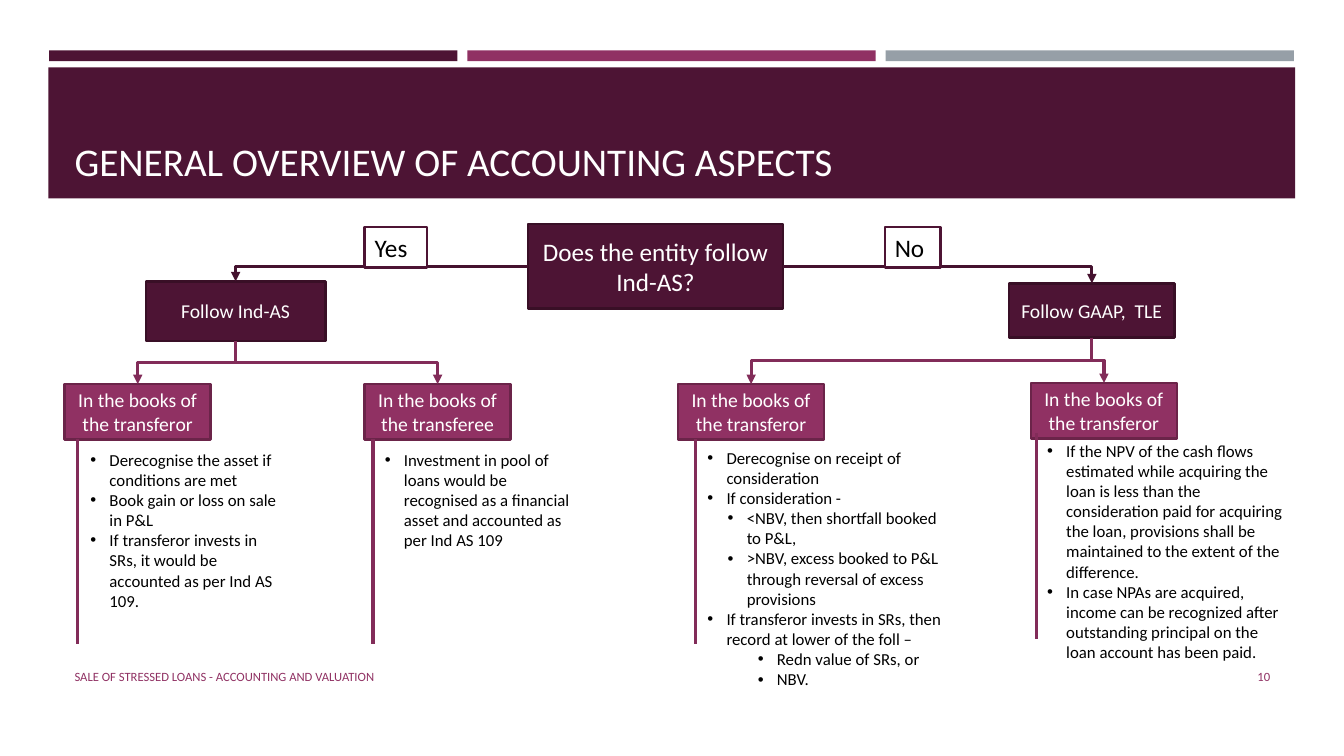
from dataclasses import dataclass

from pptx import Presentation
from pptx.dml.color import RGBColor
from pptx.enum.shapes import MSO_CONNECTOR, MSO_SHAPE
from pptx.enum.text import MSO_ANCHOR, PP_ALIGN
from pptx.oxml.ns import qn
from pptx.oxml.xmlchemy import OxmlElement
from pptx.shapes.autoshape import Shape
from pptx.shapes.connector import Connector
from pptx.slide import Slide
from pptx.util import Cm, Pt


@dataclass(frozen=True)
class Theme:
    font: str = "Calibri"
    plum: str = "4D1434"
    plum_edge: str = "390F26"
    plum_arrow: str = "45122F"
    berry: str = "903163"
    berry_edge: str = "6B2449"
    berry_arrow: str = "822C59"
    grey: str = "969FA7"
    white: str = "FFFFFF"
    black: str = "000000"
    title_size: float = 28
    question_size: float = 18
    box_size: float = 14
    point_size: float = 12
    footer_size: float = 9
    box_line: float = 1.75
    arrow_line: float = 2.25


@dataclass(frozen=True)
class Area:
    left: float
    top: float
    width: float
    height: float

    @property
    def middle_x(self) -> float:
        return self.left + self.width / 2

    @property
    def middle_y(self) -> float:
        return self.top + self.height / 2

    @property
    def right(self) -> float:
        return self.left + self.width

    @property
    def bottom(self) -> float:
        return self.top + self.height

    def lengths(self) -> tuple[Cm, Cm, Cm, Cm]:
        return Cm(self.left), Cm(self.top), Cm(self.width), Cm(self.height)


@dataclass(frozen=True)
class Point:
    text: str
    level: int = 0
    margin: float = 0.48


@dataclass(frozen=True)
class Book:
    party: str
    framework: Area
    area: Area
    rail_x: float
    rail_top: float
    treatment_area: Area
    treatment: tuple[Point, ...]


THEME = Theme()
BULLET_HANG = 0.48
RAIL_LENGTH = 5.18
BAR_PITCH = 10.54

QUESTION = Area(13.31, 5.64, 6.42, 2.13)
IND_AS = Area(3.68, 7.09, 4.52, 1.5)
GAAP = Area(25.43, 7.14, 4.17, 1.37)
FRAMEWORKS = ((IND_AS, "Follow Ind-AS"), (GAAP, "Follow GAAP,  TLE"))
ANSWERS = ((Area(9.19, 5.72, 1.57, 1.02), "Yes"), (Area(22.3, 5.72, 1.4, 1.02), "No"))

BOOKS = (
    Book("transferor", IND_AS, Area(1.63, 9.68, 3.68, 1.4), 1.96, 11.05,
         Area(2.03, 11.2, 5.36, 4.37), (
             Point("Derecognise the asset if conditions are met"),
             Point("Book gain or loss on sale in P&L"),
             Point("If transferor invests in SRs, it would be accounted as per Ind AS 109."),
         )),
    Book("transferee", IND_AS, Area(9.19, 9.68, 3.68, 1.4), 9.4, 11.05,
         Area(9.45, 11.2, 5.36, 2.82), (
             Point("Investment in pool of loans would be recognised as a financial asset "
                   "and accounted as per Ind AS 109"),
         )),
    Book("transferor", GAAP, Area(17.09, 9.68, 3.68, 1.4), 17.53, 11.05,
         Area(17.58, 11.15, 6.55, 6.4), (
             Point("Derecognise on receipt of consideration"),
             Point("If consideration -"),
             Point("<NBV, then shortfall booked to P&L,", 1, 0.99),
             Point(">NBV, excess booked to P&L through reversal of excess provisions", 1, 0.99),
             Point("If transferor invests in SRs, then record at lower of the foll –", 1),
             Point("Redn value of SRs, or", 2, 1.75),
             Point("NBV.", 2, 1.75),
         )),
    Book("transferor", GAAP, Area(25.98, 9.65, 3.68, 1.4), 26.11, 10.92,
         Area(26.14, 10.97, 6.55, 5.89), (
             Point("If the NPV of the cash flows estimated while acquiring the loan is less "
                   "than the consideration paid for acquiring the loan, provisions shall be "
                   "maintained to the extent of the difference."),
             Point("In case NPAs are acquired, income can be recognized after outstanding "
                   "principal on the loan account has been paid."),
         )),
)


def write(shape: Shape, text: str, size: float, color: str,
          align: PP_ALIGN = PP_ALIGN.LEFT, anchor: MSO_ANCHOR = MSO_ANCHOR.MIDDLE) -> None:
    frame = shape.text_frame
    frame.word_wrap = True
    frame.vertical_anchor = anchor
    frame.text = text
    for paragraph in frame.paragraphs:
        paragraph.alignment = align
        for run in paragraph.runs:
            run.font.name = THEME.font
            run.font.size = Pt(size)
            run.font.color.rgb = RGBColor.from_string(color)


def add_box(slide: Slide, area: Area, fill: str, edge: str | None = None) -> Shape:
    box = slide.shapes.add_shape(MSO_SHAPE.RECTANGLE, *area.lengths())
    box.shadow.inherit = False
    box.fill.solid()
    box.fill.fore_color.rgb = RGBColor.from_string(fill)
    if edge is None:
        box.line.fill.background()
    else:
        box.line.color.rgb = RGBColor.from_string(edge)
        box.line.width = Pt(THEME.box_line)
    return box


def add_label(slide: Slide, area: Area, text: str, size: float, color: str,
              align: PP_ALIGN = PP_ALIGN.LEFT, anchor: MSO_ANCHOR = MSO_ANCHOR.MIDDLE) -> Shape:
    label = slide.shapes.add_textbox(*area.lengths())
    write(label, text, size, color, align, anchor)
    return label


def style_line(connector: Connector, color: str, arrow: bool) -> None:
    connector.line.color.rgb = RGBColor.from_string(color)
    connector.line.width = Pt(THEME.arrow_line)
    properties = connector._element.spPr
    if arrow:
        tail = OxmlElement("a:tailEnd")
        tail.set("type", "triangle")
        properties.find(qn("a:ln")).append(tail)
    properties.append(OxmlElement("a:effectLst"))


def add_answer_arrow(slide: Slide, start_x: float, framework: Area) -> None:
    arrow = slide.shapes.add_connector(
        MSO_CONNECTOR.ELBOW, Cm(start_x), Cm(QUESTION.middle_y),
        Cm(framework.middle_x), Cm(framework.top))
    arrow._element.spPr.find(qn("a:prstGeom")).set("prst", "bentConnector2")
    style_line(arrow, THEME.plum_arrow, True)


def add_branch_arrow(slide: Slide, framework: Area, book: Area) -> None:
    drop = book.top - framework.bottom
    shift = book.middle_x - framework.middle_x
    left = (framework.middle_x + book.middle_x - drop) / 2
    top = (framework.bottom + book.top - abs(shift)) / 2
    ends = (left, left + drop) if shift < 0 else (left + drop, left)
    arrow = slide.shapes.add_connector(
        MSO_CONNECTOR.ELBOW, Cm(ends[0]), Cm(top), Cm(ends[1]), Cm(top + abs(shift)))
    arrow.rotation = 90 if shift < 0 else 270
    style_line(arrow, THEME.berry_arrow, True)


def add_treatment(slide: Slide, area: Area, points: tuple[Point, ...]) -> None:
    text = "\n".join(point.text for point in points)
    label = add_label(slide, area, text, THEME.point_size, THEME.black, anchor=MSO_ANCHOR.TOP)
    for paragraph, point in zip(label.text_frame.paragraphs, points):
        paragraph.level = point.level
        properties = paragraph._p.get_or_add_pPr()
        properties.set("marL", str(Cm(point.margin)))
        properties.set("indent", str(-Cm(BULLET_HANG)))
        bullet_font = OxmlElement("a:buFont")
        bullet_font.set("typeface", "Arial")
        bullet = OxmlElement("a:buChar")
        bullet.set("char", "•")
        properties.extend((bullet_font, bullet))


def add_book(slide: Slide, book: Book) -> None:
    box = add_box(slide, book.area, THEME.berry, THEME.berry_edge)
    write(box, f"In the books of the {book.party}", THEME.box_size, THEME.white, PP_ALIGN.CENTER)
    rail = slide.shapes.add_connector(
        MSO_CONNECTOR.STRAIGHT, Cm(book.rail_x), Cm(book.rail_top),
        Cm(book.rail_x), Cm(book.rail_top + RAIL_LENGTH))
    style_line(rail, THEME.berry_arrow, False)
    add_treatment(slide, book.treatment_area, book.treatment)
    add_branch_arrow(slide, book.framework, book.area)


def add_frame(slide: Slide) -> None:
    for index, color in enumerate((THEME.plum, THEME.berry, THEME.grey)):
        add_box(slide, Area(1.24 + index * BAR_PITCH, 1.27, 10.29, 0.27), color)
    add_box(slide, Area(1.22, 1.7, 31.42, 3.3), THEME.plum)
    add_label(slide, Area(1.63, 1.96, 30.63, 2.82), "GENERAL OVERVIEW OF ACCOUNTING ASPECTS",
              THEME.title_size, THEME.white, anchor=MSO_ANCHOR.BOTTOM)
    add_label(slide, Area(1.63, 16.54, 19.2, 1.02),
              "SALE OF STRESSED LOANS - ACCOUNTING AND VALUATION",
              THEME.footer_size, THEME.berry)
    add_label(slide, Area(29.34, 16.54, 2.92, 1.02), "10",
              THEME.footer_size, THEME.berry, PP_ALIGN.RIGHT)


def main() -> None:
    deck = Presentation()
    deck.slide_width, deck.slide_height = Cm(33.87), Cm(19.05)
    slide = deck.slides.add_slide(deck.slide_layouts[6])
    add_frame(slide)
    question = add_box(slide, QUESTION, THEME.plum, THEME.plum_edge)
    write(question, "Does the entity follow Ind-AS?", THEME.question_size, THEME.white,
          PP_ALIGN.CENTER)
    for (framework, name), start_x in zip(FRAMEWORKS, (QUESTION.left, QUESTION.right)):
        box = add_box(slide, framework, THEME.plum, THEME.plum_edge)
        write(box, name, THEME.box_size, THEME.white, PP_ALIGN.CENTER)
        add_answer_arrow(slide, start_x, framework)
    for area, answer in ANSWERS:
        box = add_box(slide, area, THEME.white, THEME.plum)
        write(box, answer, THEME.question_size, THEME.black, anchor=MSO_ANCHOR.TOP)
    for book in BOOKS:
        add_book(slide, book)
    deck.save("out.pptx")


if __name__ == "__main__":
    main()
